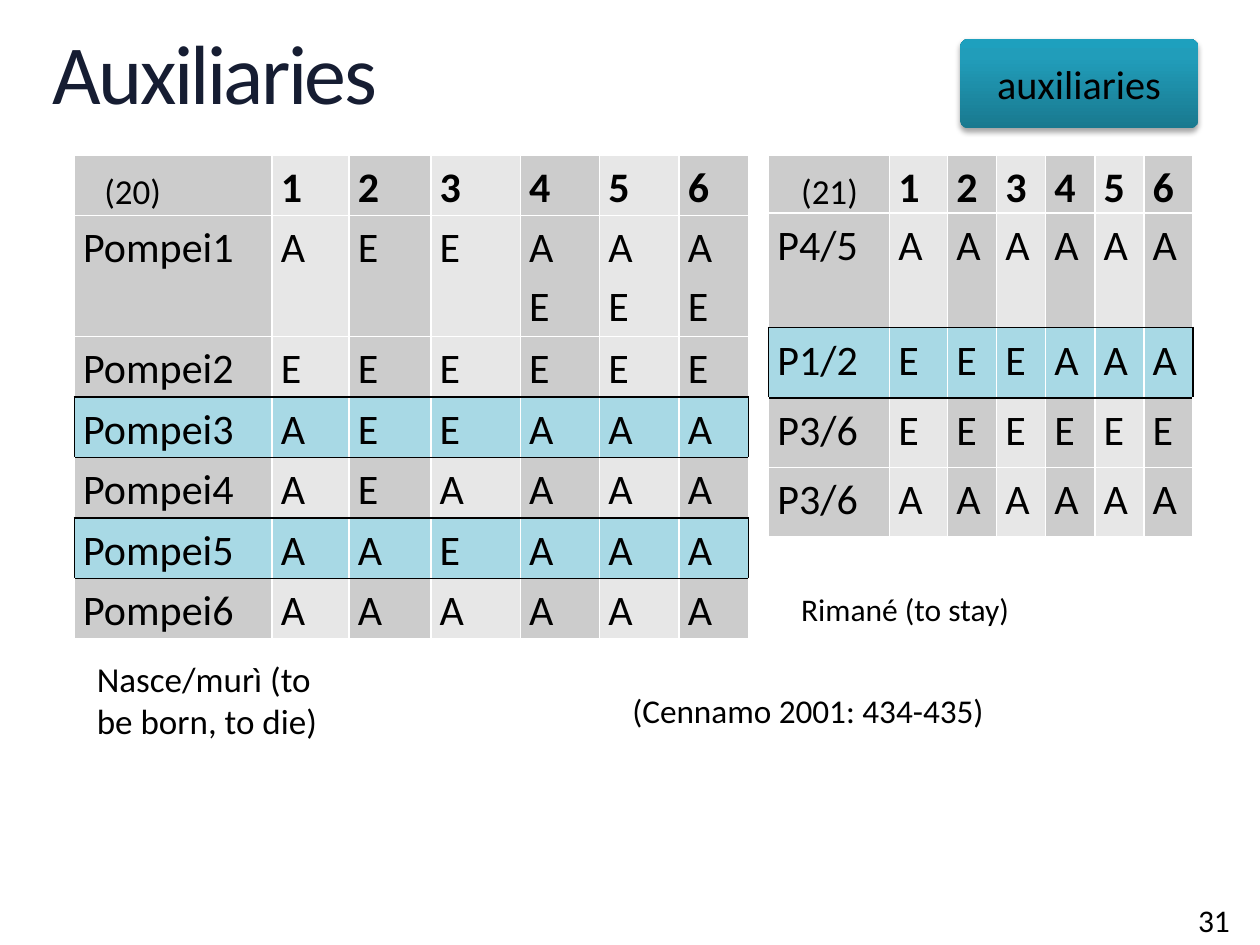
import lxml.etree
import pptx
import pptx.dml.color
import pptx.enum.shapes
import pptx.enum.text
import pptx.oxml
import pptx.oxml.ns
import pptx.util

Inches = pptx.util.Inches
Pt = pptx.util.Pt
RGBColor = pptx.dml.color.RGBColor

BLACK = RGBColor(0x00, 0x00, 0x00)
WHITE = RGBColor(0xFF, 0xFF, 0xFF)
NAVY = RGBColor(0x16, 0x1D, 0x32)
DARK = RGBColor(0xCC, 0xCC, 0xCC)
LIGHT = RGBColor(0xE7, 0xE7, 0xE7)
BLUE = RGBColor(0xA8, 0xD9, 0xE5)
TEAL = ((0, RGBColor(0x19, 0x79, 0x8F)), (80, RGBColor(0x21, 0x9D, 0xBA)),
        (100, RGBColor(0x1E, 0xA0, 0xBE)))
FONT = "Calibri"
SPACE = pptx.oxml.ns.nsdecls("a")

POMPEI = [
    ["", "1", "2", "3", "4", "5", "6"],
    ["Pompei1", "A", "E", "E", "A\nE", "A\nE", "A\nE"],
    ["Pompei2", *"EEEEEE"],
    ["Pompei3", *"AEEAAA"],
    ["Pompei4", *"AEAAAA"],
    ["Pompei5", *"AAEAAA"],
    ["Pompei6", *"AAAAAA"],
]
GROUPS = [
    ["", "1", "2", "3", "4", "5", "6"],
    ["P4/5", *"AAAAAA"],
    ["P1/2", *"EEEAAA"],
    ["P3/6", *"EEEEEE"],
    ["P3/6", *"AAAAAA"],
]


def style(para, size, color=BLACK, bold=False):
    """Set the font of a whole paragraph."""
    font = para.font
    font.name, font.size, font.bold = FONT, Pt(size), bold
    font.color.rgb = color


def add_text(slide, box, text, size):
    """Place a wrapped text box and return it."""
    shape = slide.shapes.add_textbox(*map(Inches, box))
    frame = shape.text_frame
    frame.word_wrap = True
    frame.text = text
    style(frame.paragraphs[0], size)
    return shape


def add_title(slide, box, text):
    """Place the tightly spaced slide title."""
    frame = add_text(slide, box, text, 48).text_frame
    frame.margin_left = frame.margin_right = 0
    frame.margin_top = frame.margin_bottom = 0
    para = frame.paragraphs[0]
    para.line_spacing = 0.9
    para.font.color.rgb = NAVY
    para.runs[0]._r.get_or_add_rPr().set("spc", "-150")


def add_badge(slide, box, text):
    """Place the shaded topic badge."""
    kind = pptx.enum.shapes.MSO_SHAPE.ROUNDED_RECTANGLE
    shape = slide.shapes.add_shape(kind, *map(Inches, box))
    shape.adjustments[0] = 0.09
    shape.line.fill.background()
    stops = "".join(f'<a:gs pos="{pos * 1000}"><a:srgbClr val="{color}"/></a:gs>'
                    for pos, color in TEAL)
    fill = pptx.oxml.parse_xml(
        f'<a:gradFill {SPACE} rotWithShape="1"><a:gsLst>{stops}</a:gsLst>'
        '<a:lin ang="16200000" scaled="0"/></a:gradFill>')
    shade = pptx.oxml.parse_xml(
        f'<a:effectLst {SPACE}><a:outerShdw blurRad="{Pt(3.1)}" dist="{Pt(1.8)}" '
        f'dir="5400000" rotWithShape="0"><a:srgbClr val="{BLACK}">'
        '<a:alpha val="35000"/></a:srgbClr></a:outerShdw></a:effectLst>')
    line = shape.line._get_or_add_ln()
    line.addprevious(fill)
    line.addnext(shade)
    frame = shape.text_frame
    frame.vertical_anchor = pptx.enum.text.MSO_ANCHOR.MIDDLE
    frame.text = text
    para = frame.paragraphs[0]
    para.alignment = pptx.enum.text.PP_ALIGN.CENTER
    style(para, 23)


def set_edges(cell, edges):
    """Draw the cell borders in the given colours."""
    props = cell._tc.get_or_add_tcPr()
    for spot, (side, color) in enumerate(edges.items()):
        props.insert(spot, pptx.oxml.parse_xml(
            f'<a:ln{side} {SPACE} w="{Pt(1)}"><a:solidFill>'
            f'<a:srgbClr val="{color}"/></a:solidFill></a:ln{side}>'))


def add_table(slide, left, top, cols, rows, data, marked):
    """Place a column-striped table with outlined marked rows."""
    frame = slide.shapes.add_table(
        len(rows), len(cols), Inches(left), Inches(top),
        Inches(sum(cols)), Inches(sum(rows)))
    table = frame.table
    table.first_row = table.horz_banding = False
    for col, width in zip(table.columns, cols):
        col.width = Inches(width)
    last = len(cols) - 1
    for r, (height, words) in enumerate(zip(rows, data)):
        table.rows[r].height = Inches(height)
        for c, text in enumerate(words):
            cell = table.cell(r, c)
            cell.margin_left = cell.margin_right = Inches(0.07)
            cell.margin_top = cell.margin_bottom = 0
            cell.fill.solid()
            stripe = LIGHT if c % 2 else DARK
            cell.fill.fore_color.rgb = BLUE if r in marked else stripe
            tests = {"L": r in marked and c == 0,
                     "R": r in marked and c == last,
                     "T": marked & {r, r - 1},
                     "B": marked & {r, r + 1}}
            set_edges(cell, {side: BLACK if test else WHITE
                             for side, test in tests.items()})
            if text:
                cell.text = text
                for para in cell.text_frame.paragraphs:
                    para.line_spacing = 1.15
                    style(para, 24, bold=r == 0)


def main():
    """Build and save the slide."""
    deck = pptx.Presentation()
    deck.slide_width, deck.slide_height = Inches(10), Inches(7.5)
    slide = deck.slides.add_slide(deck.slide_layouts[6])
    add_title(slide, (0.42, 0.25, 9.17, 0.73), "Auxiliaries")
    add_table(slide, 0.59, 1.23, [1.57, 0.61, 0.65, 0.71, 0.63, 0.63, 0.55],
              [0.48, 0.96] + [0.48] * 5, POMPEI, {3, 5})
    add_table(slide, 6.1, 1.23, [0.96, 0.46] + [0.39] * 5,
              [0.38, 0.91, 0.56, 0.55, 0.55], GROUPS, {2})
    add_badge(slide, (7.62, 0.31, 1.89, 0.71), "auxiliaries")
    for box, text, size in (
            ((0.67, 5.17, 1.97, 0.77), "Nasce/murì (to be born, to die)", 20),
            ((6.26, 4.63, 2.31, 0.4), "Rimané (to stay)", 18),
            ((4.92, 5.43, 4.25, 0.42), "(Cennamo 2001: 434-435)", 19),
            ((0.73, 1.3, 0.71, 0.44), "(20)", 20),
            ((6.26, 1.3, 0.79, 0.44), "(21)", 20),
            ((9.41, 7.1, 0.59, 0.4), "31", 18)):
        add_text(slide, box, text, size)
    deck.save("out.pptx")


if __name__ == "__main__":
    main()
